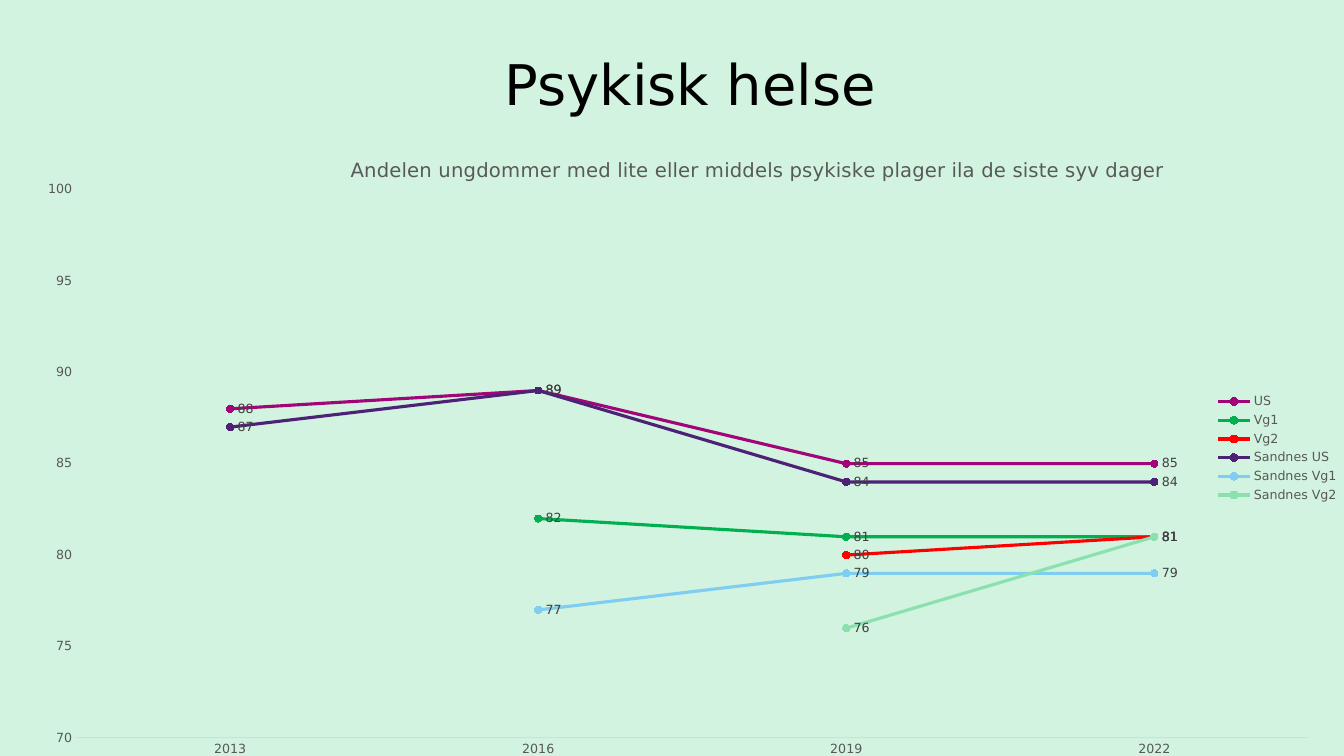
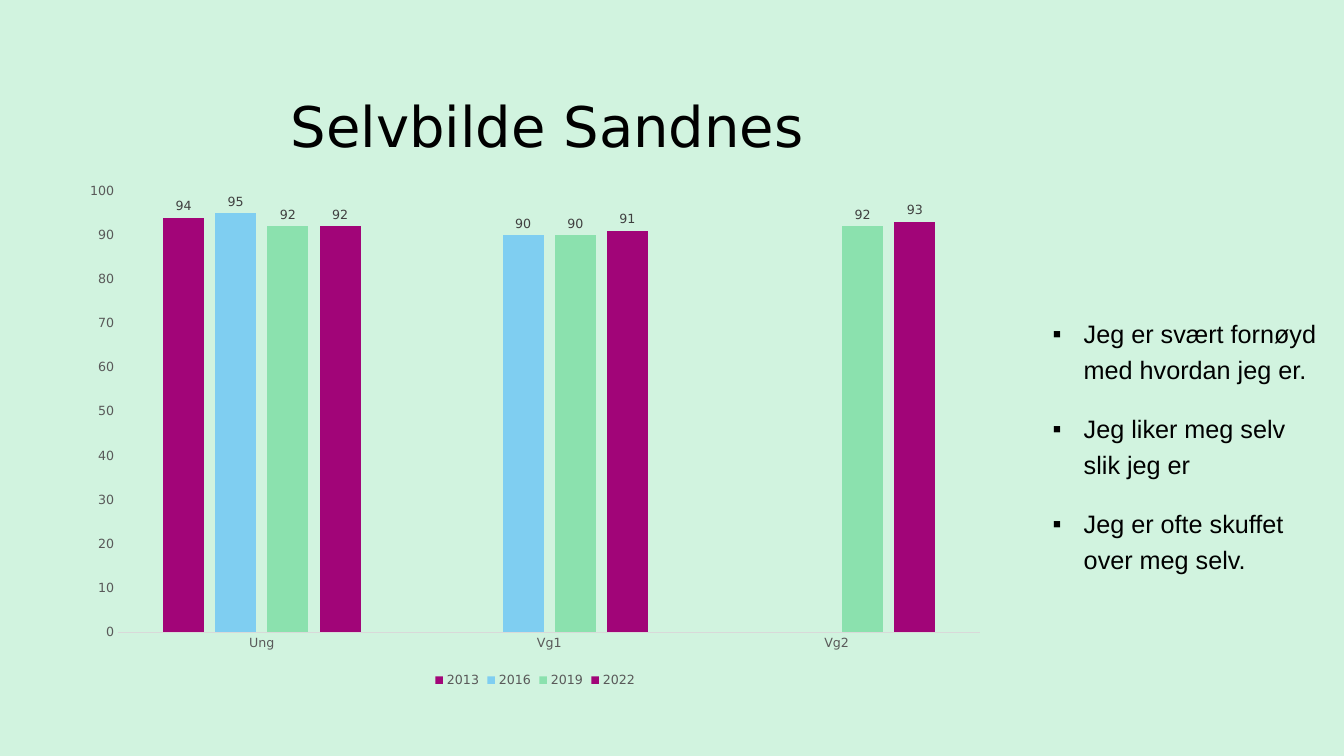
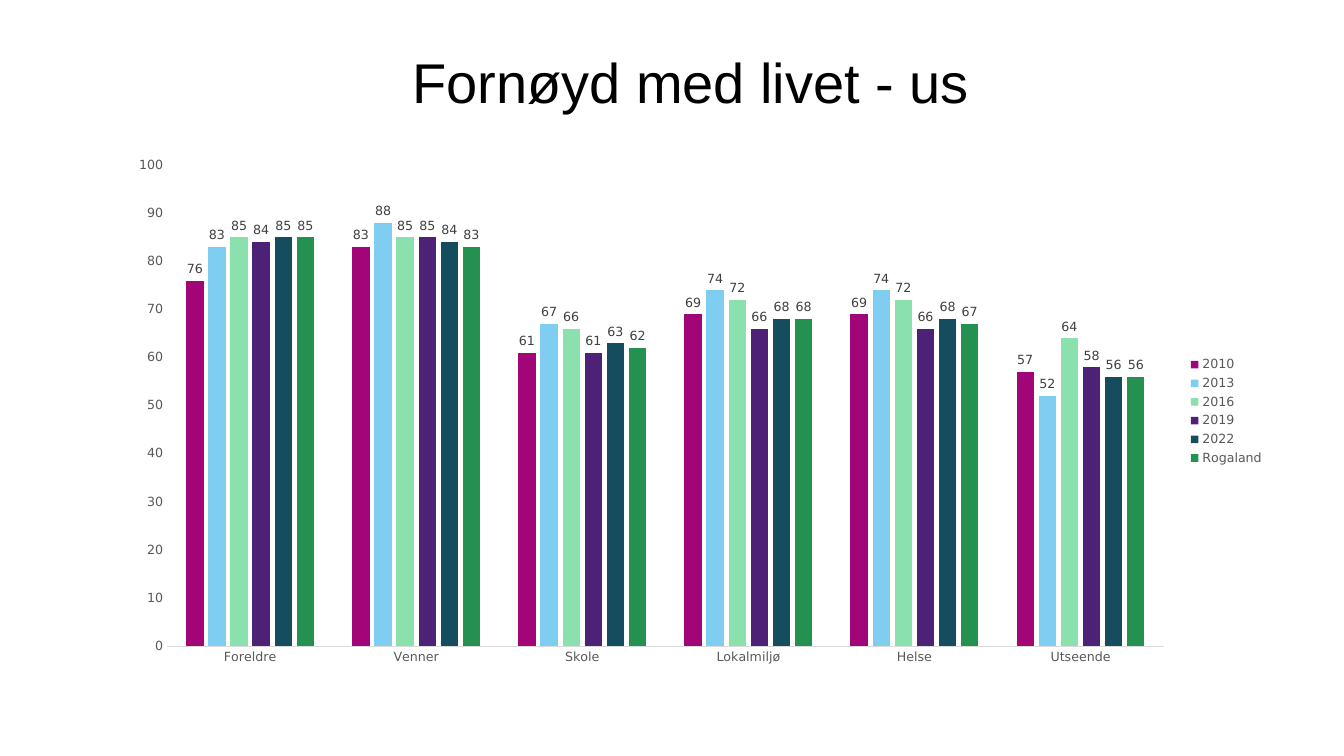
from lxml import etree
from pptx import Presentation
from pptx.chart.data import CategoryChartData
from pptx.dml.color import RGBColor
from pptx.enum.chart import XL_CHART_TYPE, XL_LEGEND_POSITION, XL_MARKER_STYLE, XL_TICK_MARK
from pptx.enum.text import MSO_ANCHOR, MSO_AUTO_SIZE, PP_ALIGN
from pptx.oxml.ns import qn
from pptx.util import Inches, Pt

LINE = XL_CHART_TYPE.LINE_MARKERS
COLUMNS = XL_CHART_TYPE.COLUMN_CLUSTERED
RIGHT, BOTTOM = XL_LEGEND_POSITION.RIGHT, XL_LEGEND_POSITION.BOTTOM
NO_TICK = XL_TICK_MARK.NONE
CIRCLE = XL_MARKER_STYLE.CIRCLE
CENTER = PP_ALIGN.CENTER
ANCHOR_TOP, ANCHOR_BOTTOM = MSO_ANCHOR.TOP, MSO_ANCHOR.BOTTOM
NO_AUTOFIT = MSO_AUTO_SIZE.NONE

BLACK = RGBColor(0x00, 0x00, 0x00)
WHITE = RGBColor(0xFF, 0xFF, 0xFF)
MINT = RGBColor(0xD1, 0xF3, 0xDF)
AXIS_TEXT = RGBColor(0x59, 0x59, 0x59)
LABEL_TEXT = RGBColor(0x40, 0x40, 0x40)
AXIS_LINE = RGBColor(0xD9, 0xD9, 0xD9)
MAGENTA = RGBColor(0xA2, 0x05, 0x78)
PLUM = RGBColor(0xA1, 0x05, 0x78)
PURPLE = RGBColor(0x4C, 0x21, 0x76)
SKY = RGBColor(0x7F, 0xCE, 0xF1)
LIGHT_GREEN = RGBColor(0x8B, 0xE1, 0xAE)
GREEN = RGBColor(0x00, 0xB0, 0x50)
FOREST = RGBColor(0x25, 0x91, 0x51)
PETROL = RGBColor(0x15, 0x4D, 0x5F)
RED = RGBColor(0xFF, 0x00, 0x00)

SANS, ARIAL = "DejaVu Sans", "Arial"
SLIDE_COLUMNS, SLIDE_ROWS = 160, 90
CELL = Inches(1 / 12)
TITLE_ONLY, TITLE_AND_BODY = 5, 1


def style_font(font, size, color, face=SANS):
    font.size, font.name, font.bold = Pt(size), face, False
    font.color.rgb = color


def set_layout(parent, **settings):
    """Fix the place of a chart part, in shares of the chart's size."""
    layout = parent.find(qn("c:layout"))
    if layout is None:
        layout = etree.Element(qn("c:layout"))
        parent.insert(0, layout)
    manual = etree.SubElement(layout, qn("c:manualLayout"))
    for tag, value in settings.items():
        etree.SubElement(manual, qn(f"c:{tag}")).set("val", str(value))


class Deck:
    def __init__(self):
        self.prs = Presentation()
        self.prs.slide_width = SLIDE_COLUMNS * CELL
        self.prs.slide_height = SLIDE_ROWS * CELL
        self.slide = None

    def new_slide(self, layout, background):
        self.slide = self.prs.slides.add_slide(self.prs.slide_layouts[layout])
        fill = self.slide.background.fill
        fill.solid()
        fill.fore_color.rgb = background

    def fill_placeholder(self, index, box, anchor, lines):
        """Move a placeholder to a grid box, write its lines and return the paragraphs."""
        holder = self.slide.placeholders[index]
        holder.left, holder.top, holder.width, holder.height = (int(n * CELL) for n in box)
        frame = holder.text_frame
        frame.text = "\n".join(lines)
        frame.auto_size, frame.vertical_anchor, frame.word_wrap = NO_AUTOFIT, anchor, True
        return frame.paragraphs

    def title(self, text, box, face=SANS):
        heading = self.fill_placeholder(0, box, ANCHOR_BOTTOM, [text])[0]
        heading.alignment, heading.line_spacing = CENTER, 1.1
        style_font(heading.runs[0].font, 40, BLACK, face)

    def bullets(self, lines, box):
        for number, item in enumerate(self.fill_placeholder(1, box, ANCHOR_TOP, lines)):
            properties = item._p.get_or_add_pPr()
            properties.set("marL", str(Inches(0.31)))
            properties.set("indent", str(-Inches(0.31)))
            etree.SubElement(properties, qn("a:buChar")).set("char", "▪")
            item.line_spacing = 1.2
            item.space_before, item.space_after = Pt(10 if number else 0), Pt(6)
            style_font(item.runs[0].font, 18, BLACK, ARIAL)

    def chart(self, kind, box, categories, series, legend, low=0, step=10):
        """Add a chart; series holds (name, colour, values) rows."""
        data = CategoryChartData(number_format="General")
        data.categories = categories
        for name, _, values in series:
            data.add_series(name, values)
        frame = self.slide.shapes.add_chart(kind, *(int(n * CELL) for n in box), data)
        chart = frame.chart
        style_font(chart.font, 10, BLACK)
        chart.has_title = False
        chart.has_legend = True
        chart.legend.position, chart.legend.include_in_layout = legend, False
        style_font(chart.legend.font, 9, AXIS_TEXT)
        self.style_axes(chart, low, step)
        for plotted, (_, color, _) in zip(chart.plots[0].series, series):
            self.style_series(plotted, color, kind == LINE)
        if kind == COLUMNS:
            plot = chart.plots[0]
            plot.gap_width, plot.overlap, plot.vary_by_categories = 219, -27, False
        return chart

    def style_axes(self, chart, low, step):
        category, value = chart.category_axis, chart.value_axis
        for axis in (category, value):
            axis.major_tick_mark = axis.minor_tick_mark = NO_TICK
            axis.has_major_gridlines = False
            style_font(axis.tick_labels.font, 9, AXIS_TEXT)
        category.format.line.color.rgb = AXIS_LINE
        category.format.line.width = Pt(0.75)
        value.format.line.fill.background()
        value.minimum_scale, value.maximum_scale, value.major_unit = low, 100, step

    def style_series(self, series, color, is_line):
        labels = series.data_labels
        labels.show_value = True
        style_font(labels.font, 9, LABEL_TEXT)
        fills = [series.format.fill]
        if is_line:
            series.smooth = False
            series.format.line.color.rgb = color
            series.format.line.width = Pt(2.25)
            series.marker.style, series.marker.size = CIRCLE, 5
            series.marker.format.line.color.rgb = color
            fills = [series.marker.format.fill]
        for fill in fills:
            fill.solid()
            fill.fore_color.rgb = color

    def chart_title(self, chart, text, x, y):
        chart.has_title = True
        frame = chart.chart_title.text_frame
        frame.text = text
        style_font(frame.paragraphs[0].runs[0].font, 14, AXIS_TEXT)
        set_layout(chart.chart_title._element, xMode="edge", yMode="edge", x=x, y=y)


def main():
    deck = Deck()

    deck.new_slide(TITLE_ONLY, MINT)
    deck.title("Psykisk helse", (16, 0.24, 132.4, 14.28))
    distress = deck.chart(LINE, (-0.6, 16.68, 161.2, 73.4), ["2013", "2016", "2019", "2022"], [
        ("US", MAGENTA, (88, 89, 85, 85)),
        ("Vg1", GREEN, (None, 82, 81, 81)),
        ("Vg2", RED, (None, None, 80, 81)),
        ("Sandnes US", PURPLE, (87, 89, 84, 84)),
        ("Sandnes Vg1", SKY, (None, 77, 79, 79)),
        ("Sandnes Vg2", LIGHT_GREEN, (None, None, 76, 81)),
    ], RIGHT, low=70, step=5)
    deck.chart_title(
        distress,
        "Andelen ungdommer med lite eller middels psykiske plager ila de siste syv dager",
        0.26, 0.02)
    set_layout(distress._chartSpace.find(".//" + qn("c:plotArea")), layoutTarget="inner",
               xMode="edge", yMode="edge", x=0.06, y=0.08, w=0.91, h=0.89)

    deck.new_slide(TITLE_AND_BODY, MINT)
    deck.title("Selvbilde Sandnes ", (0, 0.36, 132.4, 19.08))
    deck.bullets(["Jeg er svært fornøyd med hvordan jeg er.",
                  "Jeg liker meg selv slik jeg er",
                  "Jeg er ofte skuffet over meg selv."], (124.1, 36.6, 34.1, 47.6))
    deck.chart(COLUMNS, (8.52, 20.64, 110.4, 61.68), ["Ung", "Vg1", "Vg2"], [
        ("2013", MAGENTA, (94, None, None)),
        ("2016", SKY, (95, 90, None)),
        ("2019", LIGHT_GREEN, (92, 90, 92)),
        ("2022", PLUM, (92, 91, 93)),
    ], BOTTOM)

    deck.new_slide(TITLE_ONLY, WHITE)
    deck.title("Fornøyd med livet - us", (16, 0.24, 132.4, 14.04), ARIAL)
    life_areas = ["Foreldre", "Venner", "Skole", "Lokalmiljø", "Helse", "Utseende"]
    deck.chart(COLUMNS, (13.8, 17.52, 137.9, 62.9), life_areas, [
        ("2010", MAGENTA, (76, 83, 61, 69, 69, 57)),
        ("2013", SKY, (83, 88, 67, 74, 74, 52)),
        ("2016", LIGHT_GREEN, (85, 85, 66, 72, 72, 64)),
        ("2019", PURPLE, (84, 85, 61, 66, 66, 58)),
        ("2022", PETROL, (85, 84, 63, 68, 68, 56)),
        ("Rogaland", FOREST, (85, 83, 62, 68, 67, 56)),
    ], RIGHT)

    deck.prs.save("out.pptx")


if __name__ == "__main__":
    main()
